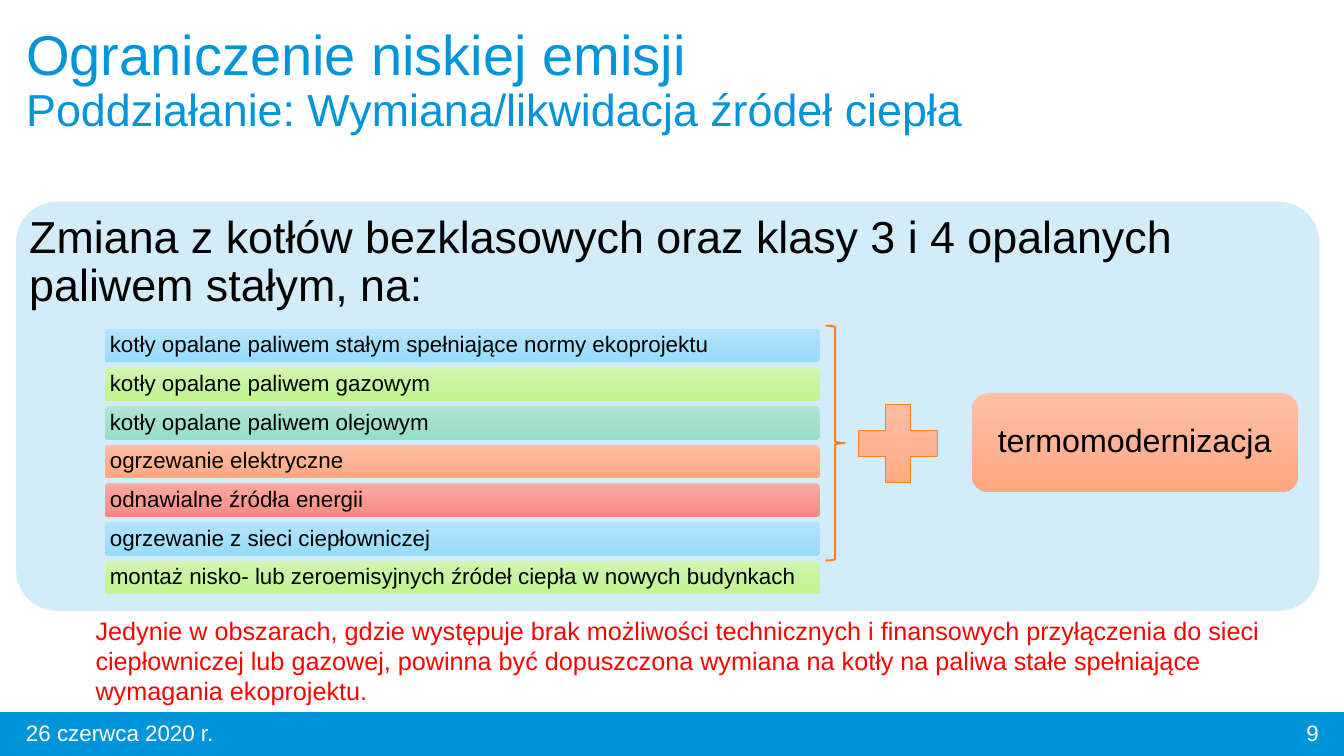
from copy import deepcopy

from pptx import Presentation
from pptx.dml.color import RGBColor
from pptx.enum.shapes import MSO_SHAPE as Kind
from pptx.enum.text import MSO_ANCHOR as Anchor, PP_ALIGN as Align
from pptx.oxml.ns import qn
from pptx.util import Pt

FONT = "Arial"
BLUE = RGBColor(0x00, 0x94, 0xDA)
PALE = RGBColor(0xD2, 0xEC, 0xFA)
WHITE = RGBColor(0xFF, 0xFF, 0xFF)
BLACK = RGBColor(0x00, 0x00, 0x00)
RED = RGBColor(0xFF, 0x00, 0x00)
AMBER = RGBColor(0xFF, 0x80, 0x21)

SKY = (RGBColor(0xB5, 0xE5, 0xFB), RGBColor(0xA6, 0xDF, 0xF9), RGBColor(0x95, 0xDD, 0xFB))
LIME = (RGBColor(0xD2, 0xF5, 0xAF), RGBColor(0xC8, 0xF3, 0xA0), RGBColor(0xC2, 0xF5, 0x8F))
MINT = (RGBColor(0xB1, 0xE5, 0xD5), RGBColor(0xA4, 0xE0, 0xCD), RGBColor(0x93, 0xDF, 0xC7))
PEACH = (RGBColor(0xFF, 0xBF, 0xA3), RGBColor(0xFF, 0xB3, 0x94), RGBColor(0xFF, 0xA8, 0x81))
CORAL = (RGBColor(0xFA, 0xA8, 0xA2), RGBColor(0xF8, 0x9A, 0x94), RGBColor(0xFB, 0x87, 0x7F))

HEATING = (
    ("kotły opalane paliwem stałym spełniające normy ekoprojektu", SKY),
    ("kotły opalane paliwem gazowym", LIME),
    ("kotły opalane paliwem olejowym", MINT),
    ("ogrzewanie elektryczne", PEACH),
    ("odnawialne źródła energii", CORAL),
    ("ogrzewanie z sieci ciepłowniczej", SKY),
    ("montaż nisko- lub zeroemisyjnych źródeł ciepła w nowych budynkach", LIME),
)
HEADING = "Zmiana z kotłów bezklasowych oraz klasy 3 i 4 opalanych paliwem stałym, na:"
NOTE = (
    "Jedynie w obszarach, gdzie występuje brak możliwości technicznych i finansowych "
    "przyłączenia do sieci ciepłowniczej lub gazowej, powinna być dopuszczona wymiana "
    "na kotły na paliwa stałe spełniające wymagania ekoprojektu."
)


def style(run, size, color):
    run.font.name = FONT
    run.font.size = Pt(size)
    run.font.color.rgb = color


def write(shape, text, size, color, align=Align.LEFT, anchor=Anchor.MIDDLE,
          inset=(7.2, 3.6), spacing=None):
    frame = shape.text_frame
    frame.word_wrap = True
    frame.vertical_anchor = anchor
    frame.margin_left = frame.margin_right = Pt(inset[0])
    frame.margin_top = frame.margin_bottom = Pt(inset[1])
    frame.text = text
    para = frame.paragraphs[0]
    para.alignment = align
    para.line_spacing = spacing
    for run in para.runs:
        style(run, size, color)


def label(slide, box, text, size, color, **layout):
    shape = slide.shapes.add_textbox(*map(Pt, box))
    write(shape, text, size, color, **layout)


def blend(shape, tones):
    fill = shape.fill
    fill.gradient()
    fill.gradient_angle = 270
    stops = shape.element.spPr.find(".//" + qn("a:gsLst"))
    stops.insert(1, deepcopy(stops[0]))
    for stop, tone, place in zip(fill.gradient_stops, tones, (0, 0.5, 1)):
        stop.color.rgb = tone
        stop.position = place


def draw(slide, kind, box, color=None, tones=None, line=None, width=1):
    shape = slide.shapes.add_shape(kind, *map(Pt, box))
    shape.shadow.inherit = False
    if tones:
        blend(shape, tones)
    elif color is not None:
        shape.fill.solid()
        shape.fill.fore_color.rgb = color
    else:
        shape.fill.background()
    if line is None:
        shape.line.fill.background()
    else:
        shape.line.color.rgb = line
        shape.line.width = Pt(width)
    return shape


def panel(slide, box, round_by, **paint):
    shape = draw(slide, Kind.ROUNDED_RECTANGLE, box, **paint)
    shape.adjustments[0] = round_by
    return shape


def head(slide):
    title = slide.shapes.title
    title.left, title.top, title.width, title.height = map(Pt, (11.5, 15.8, 741.6, 105))
    write(title, "Ograniczenie niskiej emisji\vPoddziałanie: Wymiana/likwidacja źródeł ciepła",
          40, BLUE, anchor=Anchor.TOP, spacing=0.9)
    title.text_frame.paragraphs[0].runs[1].font.size = Pt(32)


def bars(slide):
    for i, (text, tones) in enumerate(HEATING):
        bar = panel(slide, (74.9, 234.9 + 27.6 * i, 510.5, 23.9), 0.1, tones=tones)
        write(bar, text, 16, BLACK, inset=(2.9, 2.2), spacing=0.9)


def extra(slide):
    draw(slide, Kind.MATH_PLUS, (603.4, 278.6, 76.3, 76.3), tones=PEACH, line=AMBER, width=0.5)
    card = panel(slide, (694.1, 280.8, 233.3, 70.6), 0.17, tones=PEACH)
    write(card, "termomodernizacja", 23, BLACK, align=Align.CENTER, spacing=0.9)
    draw(slide, Kind.RIGHT_BRACE, (589.7, 232.6, 13.7, 167.8), line=AMBER, width=1.5)


def foot(slide):
    draw(slide, Kind.RECTANGLE, (0, 509, 960, 31), color=BLUE, line=BLUE)
    label(slide, (11.5, 509, 288, 28.8), "26 czerwca 2020 r.", 16, WHITE)
    label(slide, (733, 509, 216, 28.8), "9", 16, WHITE, align=Align.RIGHT)


def main():
    deck = Presentation()
    deck.slide_width, deck.slide_height = Pt(960), Pt(540)
    slide = deck.slides.add_slide(deck.slide_layouts[5])
    head(slide)
    foot(slide)
    panel(slide, (11.5, 144, 931, 292.3), 0.1, color=PALE)
    label(slide, (11.5, 144, 931, 87.8), HEADING, 32, BLACK, inset=(9.4, 9.4), spacing=0.9)
    bars(slide)
    label(slide, (61.2, 435.6, 887.8, 72.7), NOTE, 18, RED, anchor=Anchor.TOP)
    extra(slide)
    deck.save("out.pptx")


if __name__ == "__main__":
    main()
